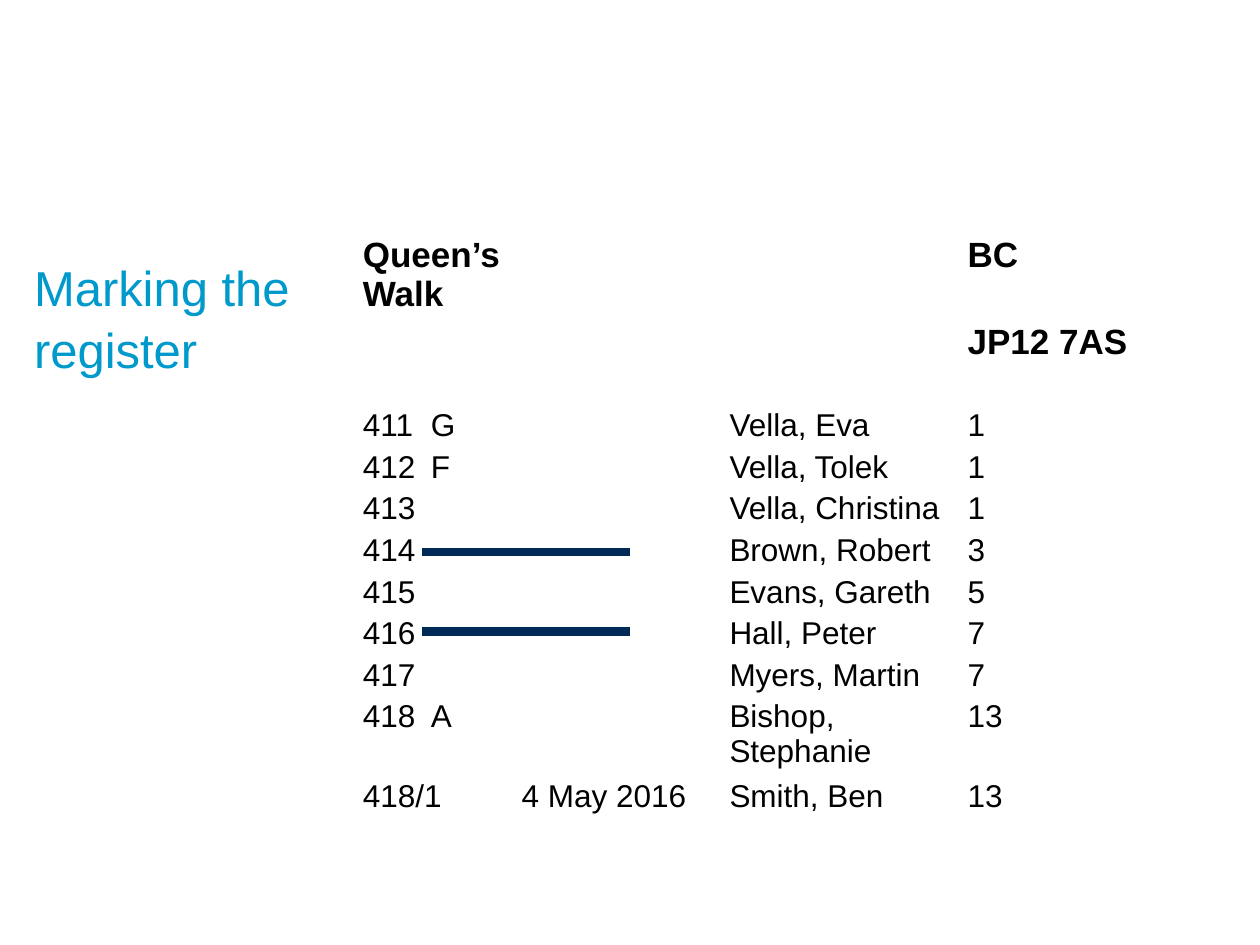
from dataclasses import dataclass

from lxml import etree
from pptx import Presentation
from pptx import util as u
from pptx.dml.color import RGBColor
from pptx.enum import shapes
from pptx.oxml import ns


@dataclass(frozen=True)
class Theme:
    font: str = "Arial"
    title: str = "0099CC"
    body: str = "000000"
    paper: str = "FFFFFF"
    strike: str = "002A56"
    title_size: int = 28
    heading_size: int = 20
    body_size: int = 18
    border_width: float = 0.75
    strike_width: int = 5


THEME = Theme()
COLUMN_WIDTHS = [1.26, 1.65, 1.89, 1.52]
ROW_HEIGHTS = [0.69, 0.36, 0.31] + [0.33] * 7 + [0.63, 0.33, 0.31]
HEADING_ROWS = 2
MARK_TAB = 0.54
BLANK = ("", "", "", "")
REGISTER = [
    ("Queen’s Walk", "", "", "BC"),
    ("", "", "", "JP12 7AS"),
    BLANK,
    ("411\tG", "", "Vella, Eva", "1"),
    ("412\tF", "", "Vella, Tolek", "1"),
    ("413", "", "Vella, Christina", "1"),
    ("414", "", "Brown, Robert", "3"),
    ("415", "", "Evans, Gareth", "5"),
    ("416", "", "Hall, Peter", "7"),
    ("417", "", "Myers, Martin", "7"),
    ("418\tA", "", "Bishop, Stephanie", "13"),
    ("418/1", "4 May 2016", "Smith, Ben", "13"),
    BLANK,
]


def set_font(para, size, color, bold=False):
    para.font.name = THEME.font
    para.font.size = u.Pt(size)
    para.font.bold = bold
    para.font.color.rgb = RGBColor.from_string(color)


def set_margins(owner, margin):
    owner.margin_left = owner.margin_right = u.Inches(margin)
    owner.margin_top = owner.margin_bottom = u.Inches(margin)


def add_tab(para, position):
    tabs = etree.SubElement(para._p.get_or_add_pPr(), ns.qn("a:tabLst"))
    etree.SubElement(tabs, ns.qn("a:tab"), pos=str(u.Inches(position)), algn="l")


def add_borders(cell):
    properties = cell._tc.get_or_add_tcPr()
    for side in ("lnL", "lnR", "lnT", "lnB"):
        line = etree.SubElement(properties, ns.qn(f"a:{side}"), w=str(u.Pt(THEME.border_width)))
        fill = etree.SubElement(line, ns.qn("a:solidFill"))
        etree.SubElement(fill, ns.qn("a:srgbClr"), val=THEME.paper)


def add_title(page, left, top, width, height):
    box = page.shapes.add_textbox(*map(u.Inches, (left, top, width, height)))
    frame = box.text_frame
    frame.word_wrap = True
    set_margins(frame, 0)
    para = frame.paragraphs[0]
    para.text = "Marking the register"
    para.line_spacing = 1.05
    set_font(para, THEME.title_size, THEME.title)


def fill_cell(cell, text, heading):
    set_margins(cell, 0.01)
    add_borders(cell)
    cell.fill.solid()
    cell.fill.fore_color.rgb = RGBColor.from_string(THEME.paper)
    para = cell.text_frame.paragraphs[0]
    para.text = text
    if "\t" in text:
        add_tab(para, MARK_TAB)
    set_font(para, THEME.heading_size if heading else THEME.body_size, THEME.body, heading)


def add_register(page, left, top, width, height):
    frame = page.shapes.add_table(
        len(REGISTER), len(COLUMN_WIDTHS), *map(u.Inches, (left, top, width, height))
    )
    table = frame.table
    table.first_row = table.horz_banding = False
    for column, column_width in zip(table.columns, COLUMN_WIDTHS):
        column.width = u.Inches(column_width)
    for index, (row, row_height) in enumerate(zip(table.rows, ROW_HEIGHTS)):
        row.height = u.Inches(row_height)
        for cell, text in zip(row.cells, REGISTER[index]):
            fill_cell(cell, text, index < HEADING_ROWS)


def add_strike(page, left, top, width):
    line = page.shapes.add_connector(
        shapes.MSO_CONNECTOR.STRAIGHT, *map(u.Inches, (left, top, left + width, top))
    )
    line.line.color.rgb = RGBColor.from_string(THEME.strike)
    line.line.width = u.Pt(THEME.strike_width)
    etree.SubElement(line._element.spPr, ns.qn("a:effectLst"))


def main():
    deck = Presentation()
    deck.slide_width, deck.slide_height = u.Inches(10), u.Inches(7.5)
    page = deck.slides.add_slide(deck.slide_layouts[6])
    add_title(page, 0.27, 2.02, 2.75, 4.67)
    add_register(page, 2.87, 1.86, sum(COLUMN_WIDTHS), sum(ROW_HEIGHTS))
    for top in (4.38, 5.01):
        add_strike(page, 3.35, top, 1.65)
    deck.save("out.pptx")


if __name__ == "__main__":
    main()
